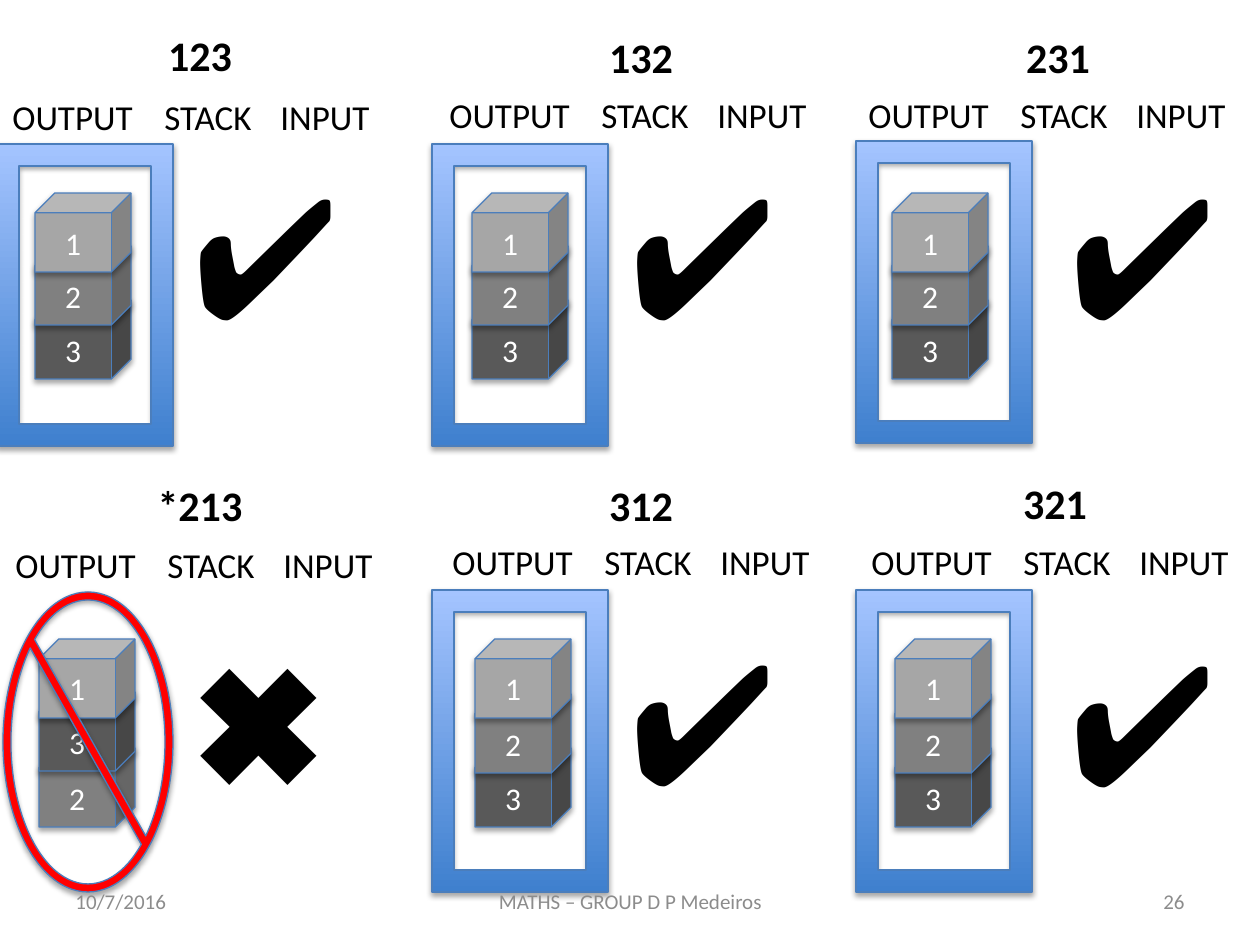
"""Build a slide showing which permutations of 1, 2, 3 a stack can sort."""
from lxml.etree import SubElement
from pptx import Presentation
from pptx.dml.color import RGBColor
from pptx.enum.shapes import MSO_SHAPE
from pptx.enum.text import MSO_ANCHOR, PP_ALIGN
from pptx.oxml.ns import qn
from pptx.util import Emu, Pt

BLACK = RGBColor(0x00, 0x00, 0x00)
WHITE = RGBColor(0xFF, 0xFF, 0xFF)
GRAY = RGBColor(0x8C, 0x8C, 0x8C)
RED = RGBColor(0xFF, 0x00, 0x00)
LINE = RGBColor(0x4B, 0x7E, 0xBC)
FRAME_DARK = RGBColor(0x3F, 0x80, 0xCE)
FRAME_LIGHT = RGBColor(0xA4, 0xC4, 0xFF)
CUBE_FILLS = {
    "1": RGBColor(0xA6, 0xA6, 0xA6),
    "2": RGBColor(0x80, 0x80, 0x80),
    "3": RGBColor(0x59, 0x59, 0x59),
}

LABELS = [("OUTPUT", 0, 152), ("STACK", 152, 116), ("INPUT", 268, 136)]
CUBE_W, CUBE_H = 96, 79
FRAME_W, FRAME_H = 176, 302
TOP_ROWS = (193, 246, 300)
LOW_ROWS = (639, 694, 748)
PANELS = [
    dict(title="123", title_at=(200, 23), labels_at=(0, 89), cubes="123",
         cube_x=35, rows=TOP_ROWS, mark_at=(180, 144), frame_at=(-3, 144)),
    dict(title="132", title_at=(641, 25), labels_at=(437, 87), cubes="123",
         cube_x=472, rows=TOP_ROWS, mark_at=(617, 144), frame_at=(432, 144)),
    dict(title="231", title_at=(1058, 25), labels_at=(856, 87), cubes="123",
         cube_x=892, rows=TOP_ROWS, mark_at=(1057, 144), frame_at=(856, 141)),
    dict(title="*213", title_at=(200, 473), labels_at=(3, 537), cubes="132",
         cube_x=39, rows=(639, 692, 748), mark_at=(180, 611), frame_at=None),
    dict(title="312", title_at=(641, 473), labels_at=(440, 534), cubes="123",
         cube_x=475, rows=LOW_ROWS, mark_at=(617, 610), frame_at=(432, 590)),
    dict(title="321", title_at=(1055, 471), labels_at=(859, 534), cubes="123",
         cube_x=895, rows=LOW_ROWS, mark_at=(1057, 611), frame_at=(856, 590)),
]
FOOTER = [
    ("10/7/2016", 63, 294, PP_ALIGN.LEFT),
    ("MATHS – GROUP D P Medeiros", 431, 399, PP_ALIGN.CENTER),
    ("26", 903, 294, PP_ALIGN.RIGHT),
]


def px(n):
    return Emu(round(n * 914400 / 126))


def write(sp, text, size, color, align, bold=False, font="Calibri"):
    p = sp.text_frame.paragraphs[0]
    p.alignment = align
    r = p.add_run()
    r.text = text
    r.font.name = font
    r.font.size = Pt(size)
    r.font.bold = bold
    r.font.color.rgb = color


def add_text(s, text, x, y, w, h, size, color=BLACK, align=PP_ALIGN.LEFT,
             anchor=MSO_ANCHOR.TOP, **style):
    sp = s.shapes.add_textbox(px(x), px(y), px(w), px(h))
    sp.text_frame.word_wrap = True
    sp.text_frame.vertical_anchor = anchor
    write(sp, text, size, color, align, **style)


def add_solid(s, kind, x, y, w, h, fill=None):
    sp = s.shapes.add_shape(kind, px(x), px(y), px(w), px(h))
    if fill is not None:
        sp.fill.solid()
        sp.fill.fore_color.rgb = fill
    sp.line.color.rgb = LINE
    sp.line.width = Pt(0.75)
    sp.shadow.inherit = False
    effects = sp._element.spPr.find(qn("a:effectLst"))
    shadow = SubElement(effects, qn("a:outerShdw"), blurRad="40000",
                        dist="23000", dir="5400000", rotWithShape="0")
    color = SubElement(shadow, qn("a:srgbClr"), val=str(BLACK))
    SubElement(color, qn("a:alpha"), val="35000")
    return sp


def add_frame(s, x, y):
    sp = add_solid(s, MSO_SHAPE.FRAME, x, y, FRAME_W, FRAME_H)
    sp.fill.gradient()
    sp.fill.gradient_angle = 90
    for stop, color in zip(sp.fill.gradient_stops, (FRAME_DARK, FRAME_LIGHT)):
        stop.color.rgb = color


def add_panel(s, panel):
    for digit, y in reversed(list(zip(panel["cubes"], panel["rows"]))):
        sp = add_solid(s, MSO_SHAPE.CUBE, panel["cube_x"], y, CUBE_W, CUBE_H,
                       CUBE_FILLS[digit])
        sp.text_frame.vertical_anchor = MSO_ANCHOR.MIDDLE
        write(sp, digit, 18, WHITE, PP_ALIGN.CENTER)

    center, y = panel["title_at"]
    add_text(s, panel["title"], center - 64, y, 128, 63, 24,
             align=PP_ALIGN.CENTER, bold=True)
    x, y = panel["labels_at"]
    for text, dx, w in LABELS:
        add_text(s, text, x + dx, y, w, 55, 20)

    if panel["frame_at"]:
        add_frame(s, *panel["frame_at"])
        mark = "✔"
    else:
        sp = add_solid(s, MSO_SHAPE.NO_SYMBOL, 3, 592, 170, 300, RED)
        sp.adjustments[0] = 0.047
        mark = "✖"
    add_text(s, mark, *panel["mark_at"], 181, 217, 96, font="Arial")


def main():
    prs = Presentation()
    prs.slide_width, prs.slide_height = px(1260), px(945)
    s = prs.slides.add_slide(prs.slide_layouts[6])
    for panel in PANELS:
        add_panel(s, panel)
    for text, x, w, align in FOOTER:
        add_text(s, text, x, 876, w, 50, 12, GRAY, align, MSO_ANCHOR.MIDDLE)
    prs.save("out.pptx")


if __name__ == "__main__":
    main()
